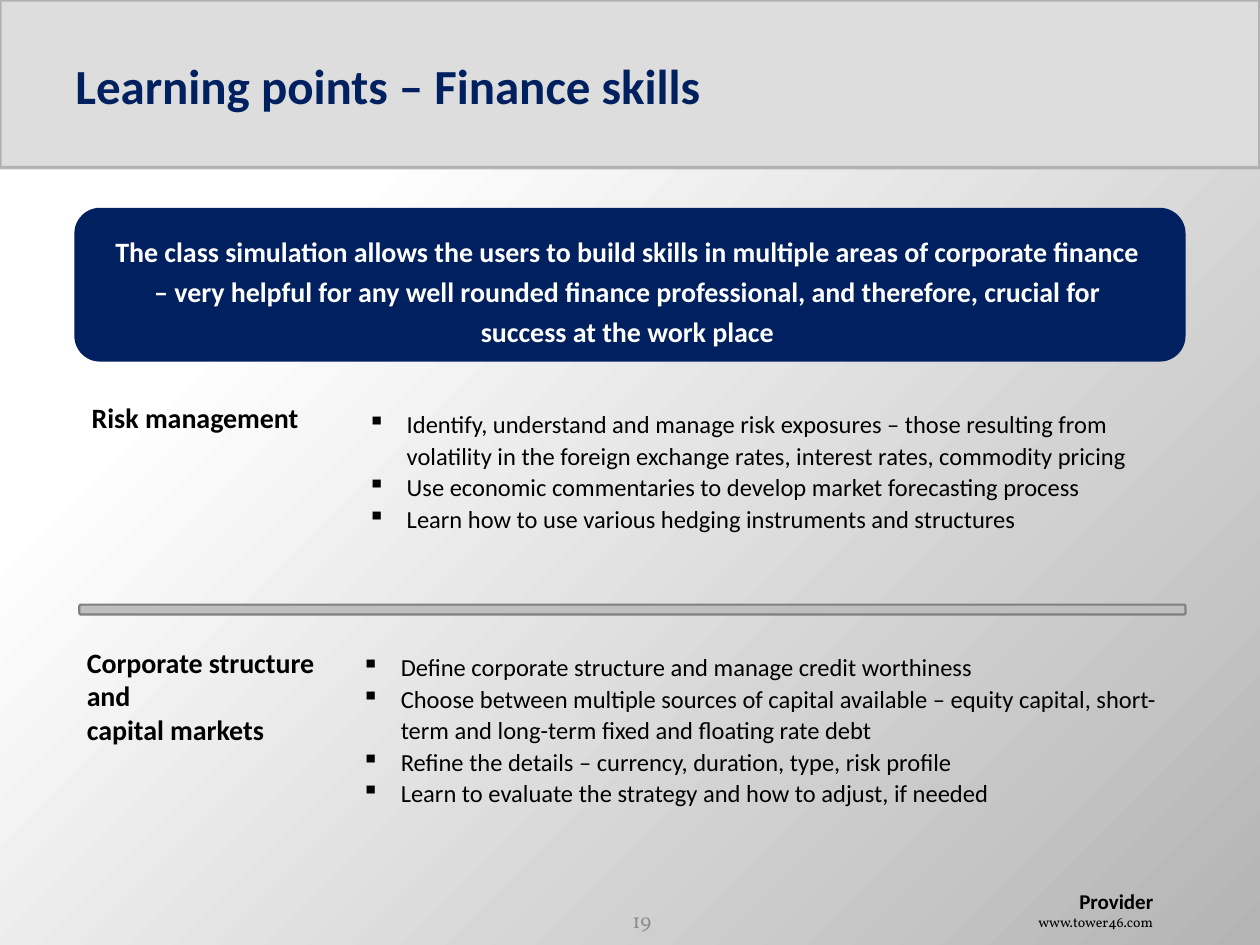
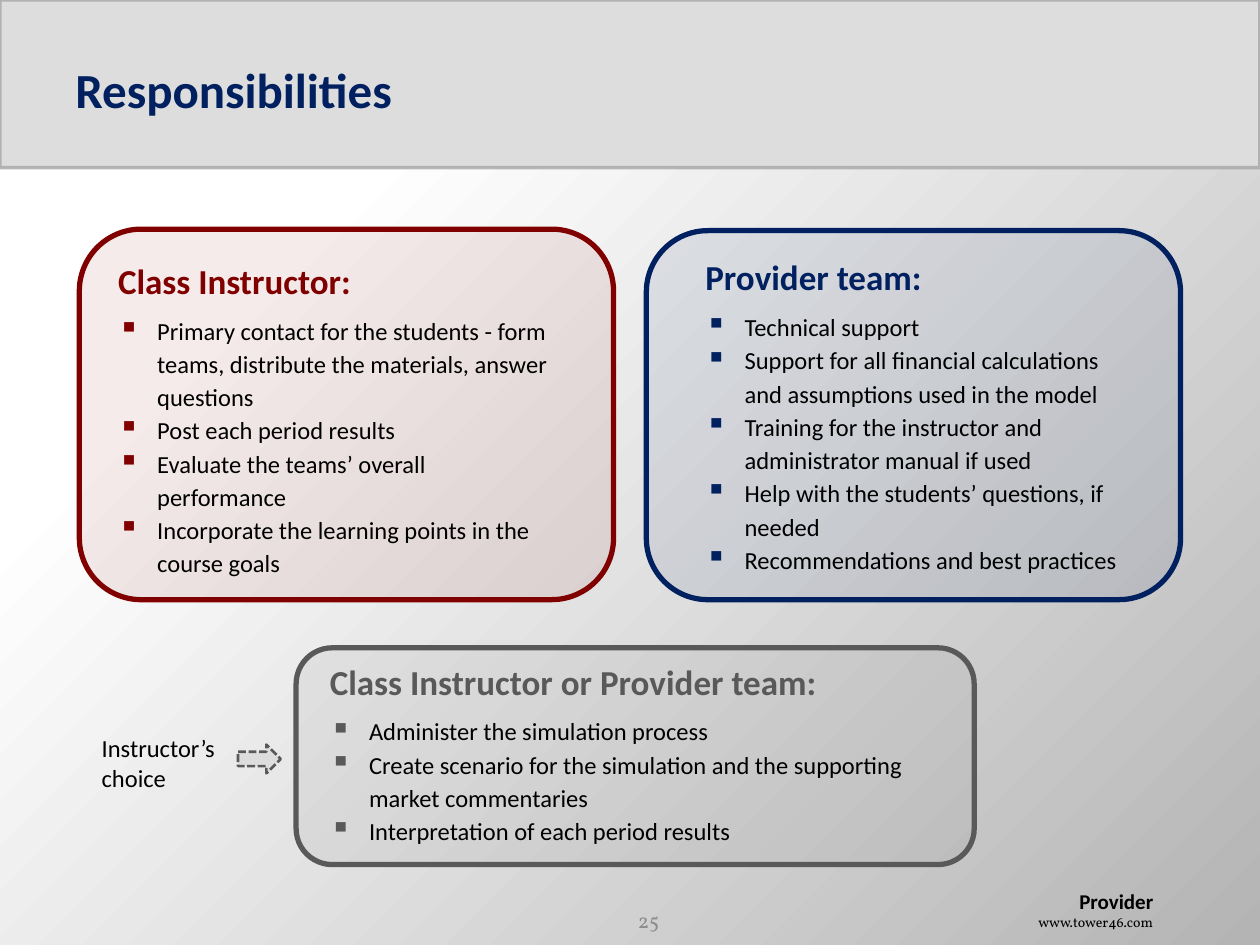
from lxml.etree import SubElement
from pptx import Presentation
from pptx.dml.color import RGBColor
from pptx.enum.dml import MSO_LINE
from pptx.enum.shapes import MSO_SHAPE
from pptx.enum.text import MSO_ANCHOR, PP_ALIGN
from pptx.oxml.ns import qn
from pptx.util import Cm, Pt

rgb = RGBColor.from_string
NAVY, MAROON, GRAY, BLACK, WHITE = "002060", "800000", "595959", "000000", "FFFFFF"
BAND, BAND_EDGE = "DDDDDD", "A6A6A6"
INDENT = Cm(0.79)

TITLE = dict(size=28, color=NAVY, bold=True)
COMPANY = dict(size=12, bold=True, align=PP_ALIGN.RIGHT)
ADDRESS = dict(size=8, font="Vollkorn", align=PP_ALIGN.RIGHT)
NUMBER = dict(size=12, font="Vollkorn", color="8C8C8C", align=PP_ALIGN.RIGHT)
MESSAGE = dict(size=16, color=WHITE, bold=True, align=PP_ALIGN.CENTER, spacing=23)
TOPIC = dict(size=16, bold=True)
SKILL = dict(size=14, spacing=18, bullet=BLACK)


def add_panel(page, kind, place, fill, edge=None, width=0, fill_alpha=100, edge_alpha=100):
    """Add a shape with a flat fill; alphas are opacities in percent."""
    panel = page.shapes.add_shape(kind, *map(Cm, place))
    panel.shadow.inherit = False
    panel.fill.solid()
    panel.fill.fore_color.rgb = rgb(fill)
    if edge:
        panel.line.color.rgb = rgb(edge)
        panel.line.width = Pt(width)
    else:
        panel.line.fill.background()
    properties = panel.element.spPr
    for holder, alpha in ((properties, fill_alpha), (properties.find(qn("a:ln")), edge_alpha)):
        if alpha < 100:
            color = holder.find(qn("a:solidFill"))[0]
            SubElement(color, qn("a:alpha")).set("val", str(alpha * 1000))
    return panel


def add_text(page, place, paragraphs, anchor=MSO_ANCHOR.TOP):
    """Add a text box from (text, style) pairs."""
    frame = page.shapes.add_textbox(*map(Cm, place)).text_frame
    frame.word_wrap = True
    frame.vertical_anchor = anchor
    for index, (text, style) in enumerate(paragraphs):
        para = frame.add_paragraph() if index else frame.paragraphs[0]
        if "bullet" in style:
            settings = para._p.get_or_add_pPr()
            settings.set("marL", str(INDENT))
            settings.set("indent", str(-INDENT))
            color = SubElement(settings, qn("a:buClr"))
            SubElement(color, qn("a:srgbClr")).set("val", style["bullet"])
            scale = style.get("bullet_scale", 100)
            SubElement(settings, qn("a:buSzPct")).set("val", str(scale * 1000))
            SubElement(settings, qn("a:buChar")).set("char", "▪")
        para.alignment = style.get("align", PP_ALIGN.LEFT)
        if "spacing" in style:
            para.line_spacing = Pt(style["spacing"])
        if "before" in style:
            para.space_before = Pt(style["before"])
        span = para.add_run()
        span.text = text
        span.font.name = style.get("font", "Calibri")
        span.font.size = Pt(style["size"])
        span.font.bold = style.get("bold", False)
        span.font.color.rgb = rgb(style.get("color", BLACK))


deck = Presentation()
deck.slide_width, deck.slide_height = Cm(25.4), Cm(19.05)

# Shared background: white at the top left, gray towards the bottom right
backdrop = deck.slide_master.background.fill
backdrop.gradient()
for stop, position, color in zip(backdrop.gradient_stops, (0.24, 1), (WHITE, "B4B4B4")):
    stop.position = position
    stop.color.rgb = rgb(color)
gradient = deck.slide_master.element.find(".//" + qn("a:gradFill"))
gradient.remove(gradient.find(qn("a:lin")))
spread = SubElement(gradient, qn("a:path"))
spread.set("path", "circle")
focus = SubElement(spread, qn("a:fillToRect"))
focus.set("r", "100000")
focus.set("b", "100000")

# Shared band, title, footer and slide number
pages = []
for title, title_top, number, number_left in (
    ("Learning points – Finance skills", 0.13, "19", 12.01),
    ("Responsibilities", 0.2, "25", 12.17),
):
    page = deck.slides.add_slide(deck.slide_layouts[6])
    add_panel(page, MSO_SHAPE.RECTANGLE, (0, 0, 25.4, 3.38), BAND, BAND_EDGE, 2, edge_alpha=78)
    add_text(page, (1.27, title_top, 22.86, 3.18), [(title, TITLE)], MSO_ANCHOR.MIDDLE)
    add_text(page, (20.32, 17.78, 3.18, 1.12),
             [("Provider", COMPANY), ("www.tower46.com", ADDRESS)])
    add_text(page, (number_left, 18.03, 1.37, 1.02), [(number, NUMBER)], MSO_ANCHOR.MIDDLE)
    pages.append(page)
skills_page, roles_page = pages

# Finance skills
add_panel(skills_page, MSO_SHAPE.ROUNDED_RECTANGLE, (1.5, 4.19, 22.4, 3.1), NAVY)
add_text(skills_page, (1.93, 4.47, 21.44, 2.72), [(
    "The class simulation allows the users to build skills in multiple areas of corporate "
    "finance – very helpful for any well rounded finance professional, and therefore, "
    "crucial for success at the work place", MESSAGE)])
add_panel(skills_page, MSO_SHAPE.ROUNDED_RECTANGLE, (1.6, 12.19, 22.3, 0.2),
          "BFBFBF", "808080", 1.25)

add_text(skills_page, (1.6, 7.95, 6.6, 0.94), [("Risk management", TOPIC)])
add_text(skills_page, (1.5, 12.9, 6.6, 2.29), [
    (line, TOPIC | dict(spacing=19))
    for line in ("Corporate structure", "and", "capital markets")])

for place, skills in (
    ((7.16, 8.08, 16, 3.58), (
        "Identify, understand and manage risk exposures – those resulting from volatility "
        "in the foreign exchange rates, interest rates, commodity pricing",
        "Use economic commentaries to develop market forecasting process",
        "Learn how to use various hedging instruments and structures")),
    ((7.04, 12.98, 16.54, 4.24), (
        "Define corporate structure and manage credit worthiness",
        "Choose between multiple sources of capital available – equity capital, "
        "short-term and long-term fixed and floating rate debt",
        "Refine the details – currency, duration, type, risk profile",
        "Learn to evaluate the strategy and how to adjust, if needed")),
):
    add_text(skills_page, place, [(skill, SKILL) for skill in skills])

# Responsibilities
for panel_place, text_place, fill, color, alpha, role, duties in (
    ((5.97, 13.06, 13.67, 4.37), (6.4, 13.36, 13.23, 3.86), "808080", GRAY, 10,
     "Class Instructor or Provider team:", (
         "Administer the simulation process",
         "Create scenario for the simulation and the supporting market commentaries",
         "Interpretation of each period results")),
    ((13.03, 4.65, 10.77, 7.44), (13.97, 5.21, 9.27, 6.55), NAVY, NAVY, 8,
     "Provider team:", (
         "Technical support",
         "Support for all financial calculations and assumptions used in the model",
         "Training for the instructor and administrator manual if used",
         "Help with the students’ questions, if needed",
         "Recommendations and best practices")),
    ((1.6, 4.62, 10.77, 7.47), (2.13, 5.28, 9.17, 6.55), MAROON, MAROON, 8,
     "Class Instructor:", (
         "Primary contact for the students - form teams, distribute the materials, "
         "answer questions",
         "Post each period results",
         "Evaluate the teams’ overall performance",
         "Incorporate the learning points in the course goals")),
):
    add_panel(roles_page, MSO_SHAPE.ROUNDED_RECTANGLE, panel_place, fill, color, 3, alpha)
    heading = dict(size=20, color=color, bold=True, spacing=19)
    duty_style = dict(size=14, spacing=19, bullet=color, bullet_scale=120)
    first, *others = duties
    add_text(roles_page, text_place,
             [(role, heading), (first, duty_style | dict(before=6))]
             + [(duty, duty_style) for duty in others])

add_text(roles_page, (1.8, 14.66, 3.86, 1.45), [("Instructor’s choice", dict(size=14))])
arrow = add_panel(roles_page, MSO_SHAPE.RIGHT_ARROW, (4.8, 15.01, 0.86, 0.58), BAND, GRAY, 1.5)
arrow.line.dash_style = MSO_LINE.SQUARE_DOT

deck.save("out.pptx")
